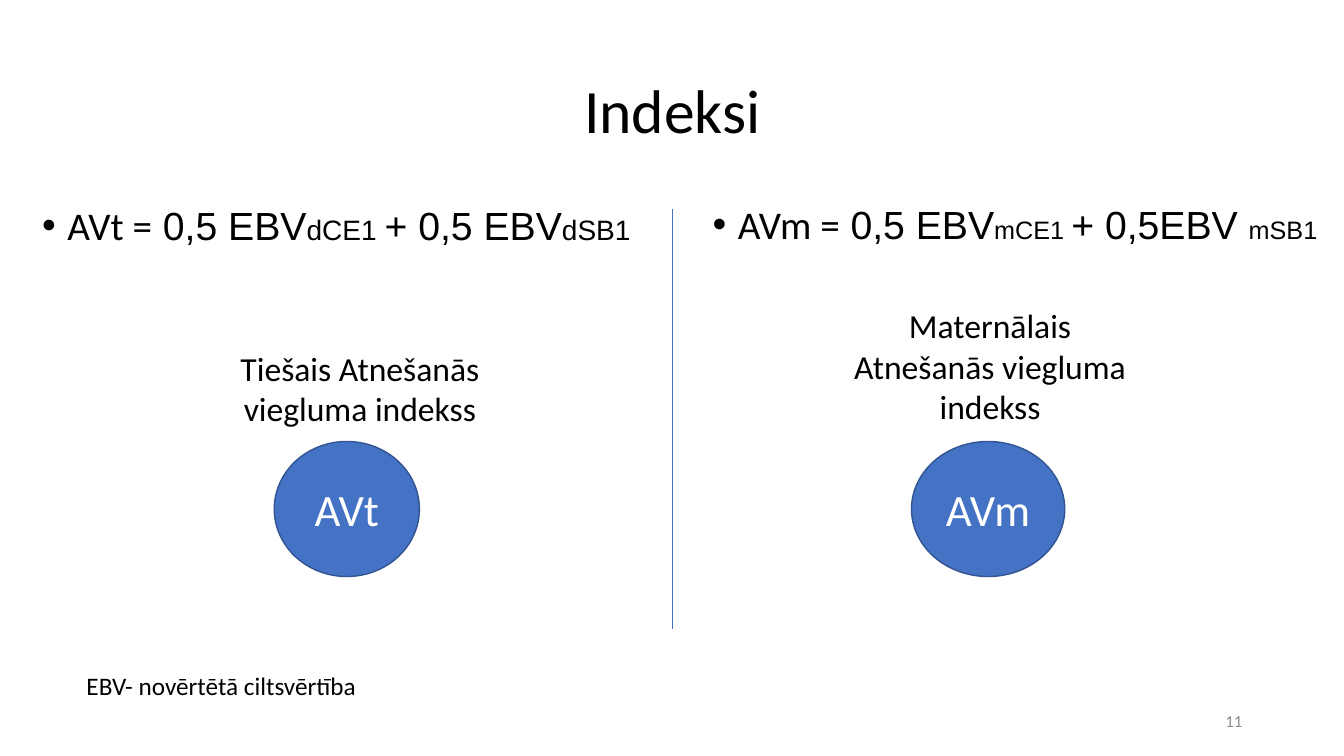
import pptx
import pptx.util
import pptx.dml.color
import pptx.enum.shapes
import pptx.enum.text
import pptx.oxml
import pptx.oxml.ns
from pptx.util import Inches

ANCHOR = pptx.enum.text.MSO_ANCHOR
ALIGN = pptx.enum.text.PP_ALIGN


def color(hex_code):
    return pptx.dml.color.RGBColor.from_string(hex_code)


def write(box, spans, align=ALIGN.LEFT, anchor=ANCHOR.TOP, hex_code="000000"):
    """Fill a box with one paragraph of (text, size, font) spans."""
    frame = box.text_frame
    frame.word_wrap = True
    frame.vertical_anchor = anchor
    para = frame.paragraphs[0]
    para.alignment = align
    for text, size, font in spans:
        span = para.add_run()
        span.text = text
        span.font.size = pptx.util.Pt(size)
        span.font.name = font
        span.font.color.rgb = color(hex_code)
    return para


deck = pptx.Presentation()
deck.slide_width, deck.slide_height = Inches(13.33), Inches(7.5)
page = deck.slides.add_slide(deck.slide_layouts[6])

# Title
box = page.shapes.add_textbox(Inches(0.92), Inches(0.4), Inches(11.5), Inches(1.45))
para = write(box, [("Indeksi", 44, "Calibri")], ALIGN.CENTER, ANCHOR.MIDDLE)
para.line_spacing = 0.9

# Bulleted formulas: left, top, width, index name, terms, subscript size
formulas = [
    (0.32, 2, 6.25, "AVt =", ["dCE1 ", "+ 0,5 EBV", "dSB1"], 20),
    (6.97, 1.99, 6.36, "AVm =", ["mCE1 ", "+ 0,5EBV ", "mSB1"], 18),
]
for left, top, width, name, (first, plus, second), small in formulas:
    box = page.shapes.add_textbox(Inches(left), Inches(top), Inches(width), Inches(4.76))
    para = write(box, [
        (name, 28, "Calibri"),
        (" 0,5 EBV", 28, "Arial"),
        (first, small, "Arial"),
        (plus, 28, "Arial"),
        (second, small, "Arial"),
    ])
    para.line_spacing = 0.9
    para.space_before = pptx.util.Pt(10)
    props = para._p.get_or_add_pPr()
    props.set("marL", str(Inches(0.25)))
    props.set("indent", str(Inches(-0.25)))
    for tag, key, value in [("a:buFont", "typeface", "Arial"), ("a:buChar", "char", "•")]:
        bullet = pptx.oxml.parse_xml(
            f'<{tag} {pptx.oxml.ns.nsdecls("a")} {key}="{value}"/>')
        props.append(bullet)

# Index captions
captions = [
    (1.97, 3.4, 0.91, "Tiešais Atnešanās viegluma indekss"),
    (8.22, 2.98, 1.31, "Maternālais Atnešanās viegluma indekss"),
]
for left, top, height, text in captions:
    box = page.shapes.add_textbox(Inches(left), Inches(top), Inches(3.2), Inches(height))
    write(box, [(text, 24, "Calibri")], ALIGN.CENTER)

# Index circles
for left, width, text in [(2.72, 1.44, "AVt"), (9.04, 1.52, "AVm")]:
    circle = page.shapes.add_shape(
        pptx.enum.shapes.MSO_SHAPE.OVAL,
        Inches(left), Inches(4.38), Inches(width), Inches(1.34))
    circle.shadow.inherit = False
    circle.fill.solid()
    circle.fill.fore_color.rgb = color("4472C4")
    circle.line.color.rgb = color("325491")
    circle.line.width = pptx.util.Pt(1)
    write(circle, [(text, 32, "Calibri")], ALIGN.CENTER, ANCHOR.MIDDLE, "FFFFFF")

# Divider between the two indices
divider = page.shapes.add_connector(
    pptx.enum.shapes.MSO_CONNECTOR.STRAIGHT,
    Inches(6.67), Inches(2.07), Inches(6.67), Inches(6.24))
divider.line.color.rgb = color("4472C4")
divider.line.width = pptx.util.Pt(0.5)
divider._element.spPr.append(
    pptx.oxml.parse_xml(f'<a:effectLst {pptx.oxml.ns.nsdecls("a")}/>'))

# Page number and footnote
box = page.shapes.add_textbox(Inches(9.42), Inches(6.95), Inches(3), Inches(0.4))
write(box, [("11", 12, "Calibri")], ALIGN.RIGHT, ANCHOR.MIDDLE, "8C8C8C")
box = page.shapes.add_textbox(Inches(0.76), Inches(6.6), Inches(3.2), Inches(0.4))
write(box, [("EBV- novērtētā ciltsvērtība", 18, "Calibri")])

deck.save("out.pptx")
